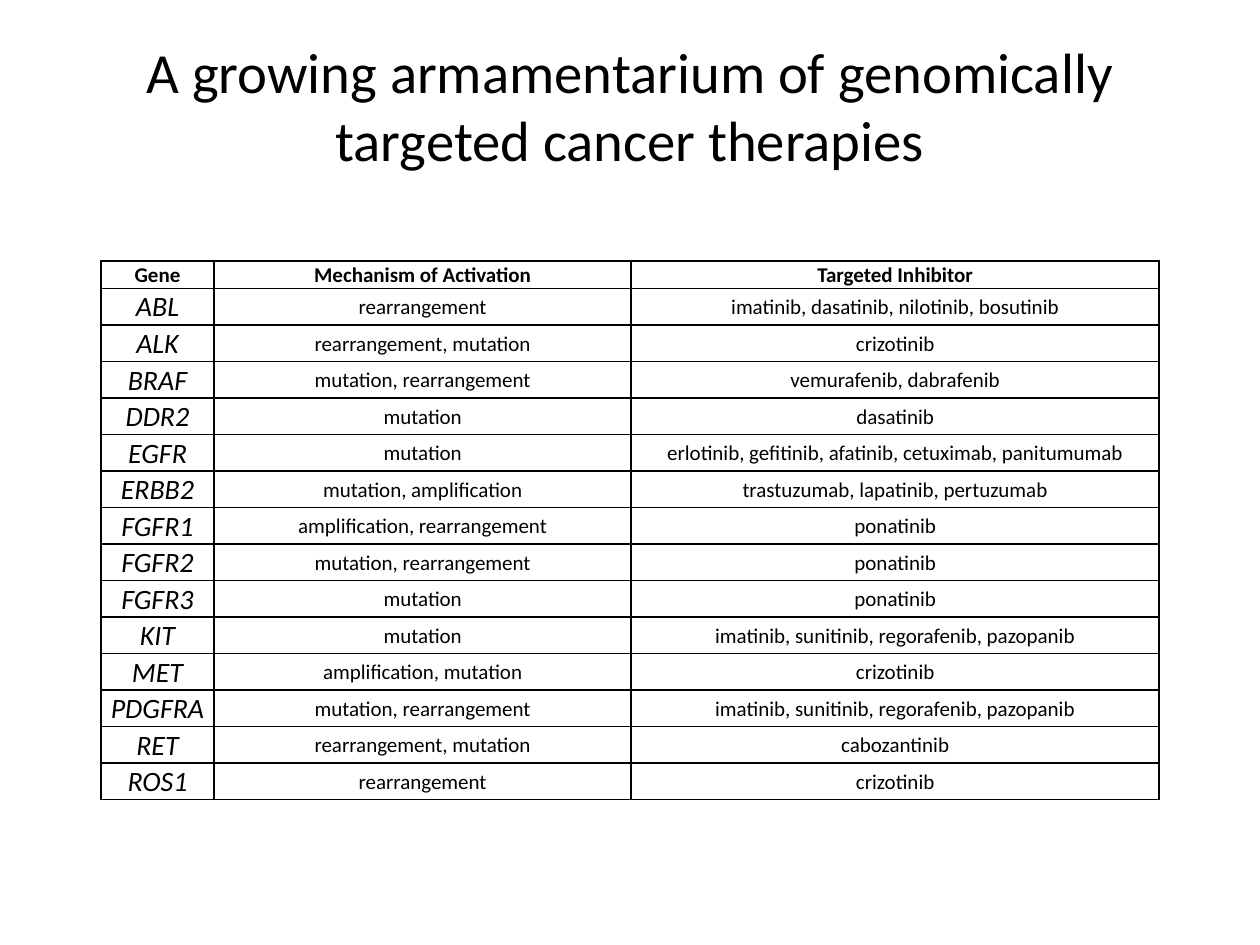
from dataclasses import dataclass

from lxml import etree
from pptx import Presentation
from pptx.dml.color import RGBColor
from pptx.enum import text
from pptx.oxml import ns
from pptx.util import Inches, Pt


@dataclass(frozen=True)
class Theme:
    font: str = "Calibri"
    ink: str = "000000"
    title_size: float = 32.4
    gene_size: float = 16
    body_size: float = 12
    border: float = 1


THEME = Theme()

TITLE = "A growing armamentarium of genomically targeted cancer therapies"
HEADINGS = ("Gene", "Mechanism of Activation", "Targeted Inhibitor")
THERAPIES = (
    ("ABL", "rearrangement", "imatinib, dasatinib, nilotinib, bosutinib"),
    ("ALK", "rearrangement, mutation", "crizotinib"),
    ("BRAF", "mutation, rearrangement", "vemurafenib, dabrafenib"),
    ("DDR2", "mutation", "dasatinib"),
    ("EGFR", "mutation", "erlotinib, gefitinib, afatinib, cetuximab, panitumumab"),
    ("ERBB2", "mutation, amplification", "trastuzumab, lapatinib, pertuzumab"),
    ("FGFR1", "amplification, rearrangement", "ponatinib"),
    ("FGFR2", "mutation, rearrangement", "ponatinib"),
    ("FGFR3", "mutation", "ponatinib"),
    ("KIT", "mutation", "imatinib, sunitinib, regorafenib, pazopanib"),
    ("MET", "amplification, mutation", "crizotinib"),
    ("PDGFRA", "mutation, rearrangement", "imatinib, sunitinib, regorafenib, pazopanib"),
    ("RET", "rearrangement, mutation", "cabozantinib"),
    ("ROS1", "rearrangement", "crizotinib"),
)

COLUMN_WIDTHS = (0.9, 3.31, 4.19)
HEADING_HEIGHT = 0.22
THERAPY_HEIGHT = 0.29

CELL_FORMAT = {
    "vertical_anchor": text.MSO_ANCHOR.MIDDLE,
    "margin_left": Inches(0.01),
    "margin_top": Inches(0.01),
    "margin_right": Inches(0.01),
    "margin_bottom": 0,
}


def set_all(target, values):
    for name, value in values.items():
        setattr(target, name, value)


def write_centred(frame, wording, size, bold=False, italic=False):
    frame.text = wording
    paragraph = frame.paragraphs[0]
    paragraph.alignment = text.PP_ALIGN.CENTER
    font = paragraph.runs[0].font
    set_all(font, {"name": THEME.font, "size": Pt(size), "bold": bold, "italic": italic})
    font.color.rgb = RGBColor.from_string(THEME.ink)


def add_borders(cell):
    properties = cell._tc.get_or_add_tcPr()
    for position, side in enumerate(("lnL", "lnR", "lnT", "lnB")):
        line = etree.Element(ns.qn(f"a:{side}"), w=str(Pt(THEME.border)))
        fill = etree.SubElement(line, ns.qn("a:solidFill"))
        etree.SubElement(fill, ns.qn("a:srgbClr"), val=THEME.ink)
        properties.insert(position, line)


def add_title(slide):
    title = slide.shapes.title
    set_all(title, {"left": Inches(0.5), "top": Inches(0.4),
                    "width": Inches(9), "height": Inches(0.86)})
    set_all(title.text_frame, {"word_wrap": True,
                               "auto_size": text.MSO_AUTO_SIZE.NONE,
                               "vertical_anchor": text.MSO_ANCHOR.MIDDLE})
    write_centred(title.text_frame, TITLE, THEME.title_size)


def fill_cell(cell, wording, **style):
    set_all(cell, CELL_FORMAT)
    cell.fill.background()
    write_centred(cell.text_frame, wording, **style)
    add_borders(cell)


def add_therapy_table(slide):
    heights = [HEADING_HEIGHT] + [THERAPY_HEIGHT] * len(THERAPIES)
    table = slide.shapes.add_table(
        len(heights), len(HEADINGS), Inches(0.8), Inches(2.07),
        Inches(sum(COLUMN_WIDTHS)), Inches(sum(heights))).table
    table.horz_banding = False
    for column, width in zip(table.columns, COLUMN_WIDTHS):
        column.width = Inches(width)
    for row, height in zip(table.rows, heights):
        row.height = Inches(height)

    # Heading row
    for column, heading in enumerate(HEADINGS):
        fill_cell(table.cell(0, column), heading, size=THEME.body_size, bold=True)

    # One row per gene, with the gene name in larger italics
    for row, (gene, *details) in enumerate(THERAPIES, start=1):
        fill_cell(table.cell(row, 0), gene, size=THEME.gene_size, italic=True)
        for column, detail in enumerate(details, start=1):
            fill_cell(table.cell(row, column), detail, size=THEME.body_size)


def main():
    deck = Presentation()
    set_all(deck, {"slide_width": Inches(10), "slide_height": Inches(7.5)})
    slide = deck.slides.add_slide(deck.slide_layouts[5])
    add_title(slide)
    add_therapy_table(slide)
    deck.save("out.pptx")


if __name__ == "__main__":
    main()
